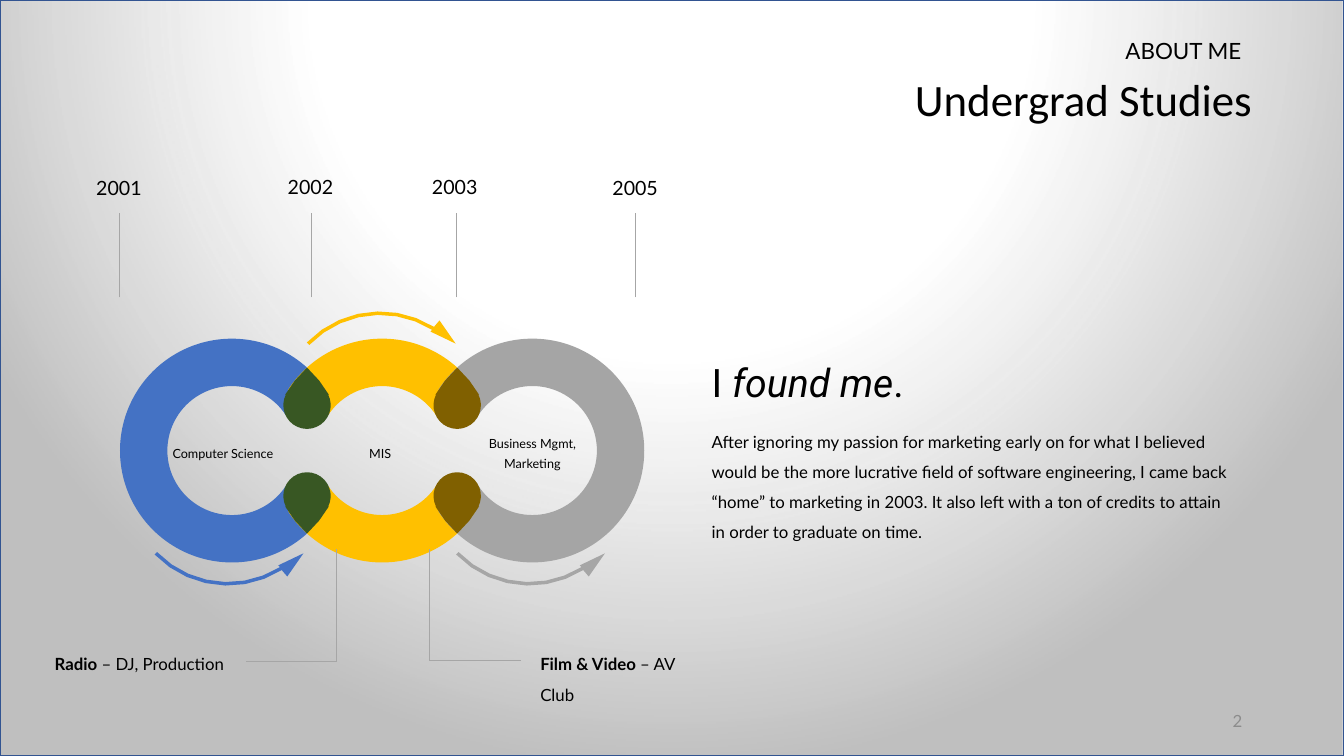
"""Builds the undergraduate studies slide with its chain of three rings."""
from math import ceil, cos, radians, sin

from lxml import etree
from pptx import Presentation
from pptx.dml.color import RGBColor
from pptx.enum.shapes import MSO_CONNECTOR as Connector, MSO_SHAPE as Shape
from pptx.enum.text import MSO_ANCHOR as Anchor, MSO_AUTO_SIZE as AutoSize, PP_ALIGN as Align
from pptx.oxml import parse_xml
from pptx.oxml.ns import nsdecls, qn
from pptx.util import Inches, Pt

BLUE, GOLD, GRAY, RULE = "4472C4", "FFC000", "A5A5A5", "A6A6A6"
GREEN, BROWN, BLACK = "385723", "806000", "000000"
LEFT, CENTER, RIGHT = Align.LEFT, Align.CENTER, Align.RIGHT

TITLE = "Undergrad Studies"
STORY = ("After ignoring my passion for marketing early on for what I believed would be the more "
         "lucrative field of software engineering, I came back “home” to marketing in 2003. It also "
         "left with a ton of credits to attain in order to graduate on time.")
YEARS = [("2001", 0.63, 1.58, 1.18), ("2002", 2.53, 1.57, 3.09),
         ("2003", 3.96, 1.57, 4.53), ("2005", 5.75, 1.58, 6.3)]
MAJORS = [("Computer Science", 1.52, 4.33, 0.28), ("MIS", 3.08, 4.33, 0.28),
          ("Business Mgmt, Marketing", 4.59, 4.23, 0.48)]
CLUBS = [("Radio ", "– DJ, Production", (0.3, 6.34, 2.02, 0.37), RIGHT),
         ("Film & Video ", "– AV Club", (5.26, 6.34, 1.89, 0.37), LEFT)]
CLUB_RULES = [(3.34, 5.45, 3.34, 6.56), (3.34, 6.56, 2.44, 6.56),
              (4.26, 5.45, 4.26, 6.56), (5.17, 6.55, 4.27, 6.55)]

RING_X, RING_Y, PITCH = 2.3, 4.47, 1.49
OUTER, INNER = 1.11, 0.64
TIP, MOUTH = 47.5, 33
BANDS = [(0, BLUE, MOUTH, 360 - MOUTH), (1, GOLD, 180 + MOUTH, 360 - MOUTH),
         (1, GOLD, MOUTH, 180 - MOUTH), (2, GRAY, 180 + MOUTH, 180 - MOUTH)]
JOINTS = [(0, GREEN), (1, BROWN)]
ARROWS = [(2.26, 4.8, 1, BLUE), (5.25, 4.8, 1, RULE), (3.77, 4.1, -1, GOLD)]
ARROW_HEAD = [(0.59, 0.92), (0.75, 0.69), (0.5, 0.81)]


def rgb(hex_color):
    return RGBColor.from_string(hex_color)


def arc(x, y, radius, start, end):
    steps = ceil(abs(end - start) / 12)
    angles = [radians(start + (end - start) * i / steps) for i in range(steps + 1)]
    return [(x + radius * cos(a), y + radius * sin(a)) for a in angles]


def flip(points, axis_y):
    return [(x, 2 * axis_y - y) for x, y in points]


def paint(shape, color):
    shape.shadow.inherit = False
    shape.fill.solid()
    shape.fill.fore_color.rgb = rgb(color)
    shape.line.fill.background()


def add_outline(slide, points, color):
    first, *rest = [(Inches(x), Inches(y)) for x, y in points]
    builder = slide.shapes.build_freeform(*first)
    builder.add_line_segments(rest, close=True)
    paint(builder.convert_to_shape(), color)


def add_rule(slide, *ends):
    rule = slide.shapes.add_connector(Connector.STRAIGHT, *map(Inches, ends))
    rule.line.color.rgb = rgb(RULE)
    rule.line.width = Pt(0.5)
    etree.SubElement(rule._element.spPr, qn("a:effectLst"))


def style(paragraph, size, font, align, spacing, color=BLACK):
    paragraph.alignment = align
    paragraph.line_spacing = spacing
    paragraph.font.size = Pt(size)
    paragraph.font.name = font
    paragraph.font.color.rgb = rgb(color)


def add_text(slide, box, runs, size, align=LEFT, spacing=1.0, font="Lato", color=BLACK, grow=True):
    frame = slide.shapes.add_textbox(*map(Inches, box)).text_frame
    frame.word_wrap = True
    frame.auto_size = AutoSize.SHAPE_TO_FIT_TEXT if grow else AutoSize.NONE
    paragraph = frame.paragraphs[0]
    for words, bold, italic in runs:
        run = paragraph.add_run()
        run.text = words
        if bold:
            run.font.bold = True
        if italic:
            run.font.italic = True
    style(paragraph, size, font, align, spacing, color)
    return frame


def plain(words):
    return [(words, False, False)]


def add_backdrop(slide, width, height):
    backdrop = slide.shapes.add_shape(Shape.RECTANGLE, 0, 0, width, height)
    backdrop.shadow.inherit = False
    backdrop.line.color.rgb = rgb("325491")
    backdrop.line.width = Pt(1)
    backdrop.fill.background()
    properties = backdrop._element.spPr
    gradient = parse_xml(
        f'<a:gradFill {nsdecls("a")} rotWithShape="1"><a:gsLst>'
        '<a:gs pos="31000"><a:srgbClr val="FFFFFF"/></a:gs>'
        '<a:gs pos="47000"><a:srgbClr val="FFFFFF"><a:alpha val="82000"/></a:srgbClr></a:gs>'
        '<a:gs pos="100000"><a:srgbClr val="BFBFBF"/></a:gs></a:gsLst>'
        '<a:path path="circle"><a:fillToRect l="50000" t="-80000" r="50000" b="180000"/></a:path>'
        '</a:gradFill>')
    properties.replace(properties.find(qn("a:noFill")), gradient)
    slide.shapes._spTree.insert(2, backdrop._element)


def add_title(slide):
    title = slide.shapes.title
    title.left, title.top, title.width, title.height = map(Inches, (6.77, 0.75, 5.65, 0.52))
    frame = title.text_frame
    frame.text = TITLE
    frame.margin_left = frame.margin_right = frame.margin_top = frame.margin_bottom = 0
    frame.word_wrap = False
    frame.auto_size = AutoSize.NONE
    frame.vertical_anchor = Anchor.MIDDLE
    style(frame.paragraphs[0], 32, "Calibri", RIGHT, 0.9)


def add_chain(slide):
    for index, color, start, end in BANDS:
        corner = (RING_X + index * PITCH - OUTER, RING_Y - OUTER, 2 * OUTER, 2 * OUTER)
        band = slide.shapes.add_shape(Shape.BLOCK_ARC, *map(Inches, corner))
        band.adjustments[0] = start * 0.6
        band.adjustments[1] = end * 0.6
        band.adjustments[2] = (OUTER - INNER) / (2 * OUTER)
        paint(band, color)
    for index, color in JOINTS:
        x = RING_X + index * PITCH
        drop = (arc(x, RING_Y, OUTER, -TIP, -30)
                + arc(x + PITCH / 2, 4.02, 0.235, -27, 207)
                + arc(x + PITCH, RING_Y, OUTER, 210, 180 + TIP))
        add_outline(slide, drop, color)
        add_outline(slide, flip(drop, RING_Y), color)
    for x, y, direction, color in ARROWS:
        head = [(x + dx, y + dy) for dx, dy in ARROW_HEAD]
        arrow = arc(x, y, 1.01, 136, 58) + head + arc(x, y, 0.975, 58, 136)
        add_outline(slide, arrow if direction > 0 else flip(arrow, y), color)


def main():
    deck = Presentation()
    deck.slide_width, deck.slide_height = Inches(13.33), Inches(7.5)
    slide = deck.slides.add_slide(deck.slide_layouts[5])
    add_backdrop(slide, deck.slide_width, deck.slide_height)
    add_title(slide)
    add_text(slide, (9.84, 0.35, 2.57, 0.34), plain("ABOUT ME"), 16, RIGHT, 0.9, grow=False)
    add_chain(slide)
    for major, x, y, height in MAJORS:
        add_text(slide, (x, y, 1.38, height), plain(major), 9, CENTER, 1.3)
    headline = [("I ", False, False), ("found me", False, True), (".", False, False)]
    add_text(slide, (6.96, 3.51, 5.32, 0.57), headline, 28, font="Roboto")
    add_text(slide, (6.96, 4.13, 5.32, 1.28), plain(STORY), 12, spacing=1.5)
    for ends in CLUB_RULES:
        add_rule(slide, *ends)
    for club, role, box, align in CLUBS:
        add_text(slide, box, [(club, True, False), (role, False, False)], 12, align, 1.5)
    for year, x, y, rule_x in YEARS:
        add_rule(slide, rule_x, 2.95, rule_x, 2.11)
        add_text(slide, (x, y, 1.1, 0.42), plain(year), 14, CENTER, 1.5)
    number = add_text(slide, (9.42, 6.95, 3, 0.4), plain("2"), 12, RIGHT, color="8C8C8C", grow=False)
    number.vertical_anchor = Anchor.MIDDLE
    deck.save("out.pptx")


if __name__ == "__main__":
    main()
